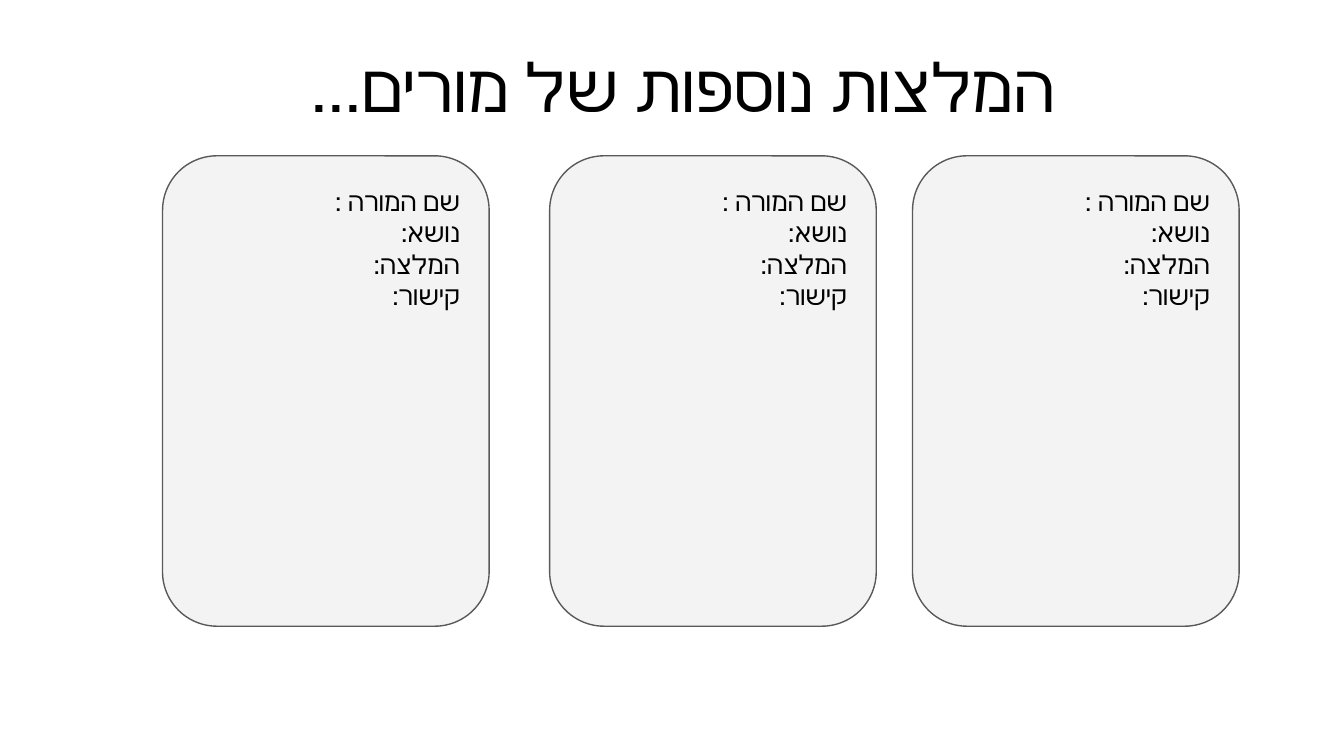
from pptx import Presentation
from pptx.dml.color import RGBColor
from pptx.enum import shapes, text
from pptx.util import Inches, Pt

SLIDE_WIDTH = 10
SLIDE_HEIGHT = SLIDE_WIDTH * 9 / 16
TITLE = "המלצות נוספות של מורים..."
FIELDS = ["שם המורה :", "נושא:", "המלצה:", "קישור:"]
CARD_LEFTS = [6.79, 4.09, 1.21]
CARD_TOP, CARD_WIDTH, CARD_HEIGHT = 1.16, 2.43, 3.5
FONT = "Arial"


def color(hex_value):
    return RGBColor.from_string(hex_value)


def write_rtl(frame, lines, size, align, anchor):
    """Fill a text frame with right-to-left paragraphs, one per line."""
    frame.word_wrap = True
    frame.auto_size = text.MSO_AUTO_SIZE.NONE
    frame.vertical_anchor = anchor
    frame.margin_left = frame.margin_right = Inches(0.1)
    frame.margin_top = frame.margin_bottom = Inches(0.1)
    for i, line in enumerate(lines):
        paragraph = frame.add_paragraph() if i else frame.paragraphs[0]
        paragraph.alignment = align
        paragraph.space_before = Pt(0)
        paragraph._p.get_or_add_pPr().set("rtl", "1")
        run = paragraph.add_run()
        run.text = line
        run.font.size = Pt(size)
        run.font.name = FONT
        run.font.color.rgb = color("000000")


def add_card(slide, left):
    card = slide.shapes.add_shape(
        shapes.MSO_SHAPE.ROUNDED_RECTANGLE,
        Inches(left), Inches(CARD_TOP), Inches(CARD_WIDTH), Inches(CARD_HEIGHT))
    card.shadow.inherit = False
    card.fill.solid()
    card.fill.fore_color.rgb = color("F3F3F3")
    card.line.color.rgb = color("595959")
    card.line.width = Pt(0.75)
    write_rtl(card.text_frame, FIELDS, 14, text.PP_ALIGN.RIGHT, text.MSO_ANCHOR.TOP)


def main():
    deck = Presentation()
    deck.slide_width, deck.slide_height = Inches(SLIDE_WIDTH), Inches(SLIDE_HEIGHT)
    slide = deck.slides.add_slide(deck.slide_layouts.get_by_name("Title Only"))

    title = slide.shapes.title
    title.left, title.top = Inches(0.42), Inches(0.3)
    title.width, title.height = Inches(9.32), Inches(0.67)
    write_rtl(title.text_frame, [TITLE], 36, text.PP_ALIGN.CENTER, text.MSO_ANCHOR.MIDDLE)

    for left in CARD_LEFTS:
        add_card(slide, left)
    deck.save("out.pptx")


if __name__ == "__main__":
    main()
